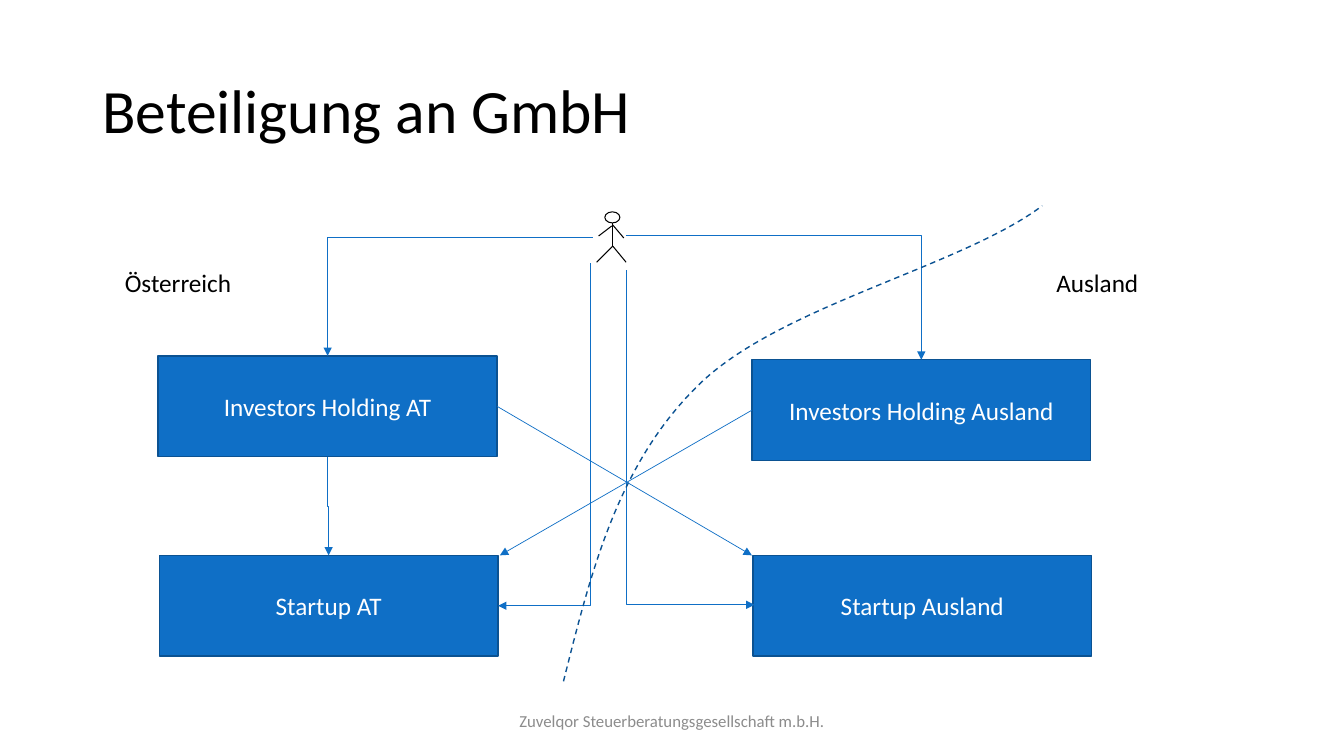
from lxml.etree import SubElement
from pptx import Presentation
from pptx.dml.color import RGBColor
from pptx.enum.dml import MSO_LINE_DASH_STYLE as Dash
from pptx.enum.shapes import MSO_CONNECTOR as Link, MSO_SHAPE as Shape
from pptx.enum.text import MSO_ANCHOR as Anchor, MSO_AUTO_SIZE as Fit, PP_ALIGN as Align
from pptx.oxml.ns import qn
from pptx.util import Pt

BLACK = RGBColor(0x00, 0x00, 0x00)
WHITE = RGBColor(0xFF, 0xFF, 0xFF)
GREY = RGBColor(0x8C, 0x8C, 0x8C)
BLUE = RGBColor(0x0F, 0x6F, 0xC6)
DARK_BLUE = RGBColor(0x0B, 0x52, 0x92)
BOX_WIDTH, BOX_HEIGHT = 242, 72


def write(frame, text, size, color, frame_format, para_format):
    """Put one formatted line of text into a text frame."""
    for name, value in frame_format.items():
        setattr(frame, name, value)
    para = frame.paragraphs[0]
    for name, value in para_format.items():
        setattr(para, name, value)
    span = para.add_run()
    span.text = text
    for name, value in {"name": "Calibri", "size": Pt(size)}.items():
        setattr(span.font, name, value)
    span.font.color.rgb = color


def add_text(page, box, text, size, color, frame_format, para_format):
    """Add a text box filling the given box."""
    area = page.shapes.add_textbox(*map(Pt, box))
    write(area.text_frame, text, size, color, frame_format, para_format)


def set_line(shape, color, width):
    """Give a shape or connector a plain outline."""
    shape.line.color.rgb = color
    shape.line.width = Pt(width)


def add_link(shapes, kind, start, end, color, width, arrow=True):
    """Add a connector without shadow, with an arrowhead if wanted."""
    link = shapes.add_connector(kind, *map(Pt, (*start, *end)))
    set_line(link, color, width)
    properties = link._element.spPr
    if arrow:
        SubElement(properties.find(qn("a:ln")), qn("a:tailEnd"), type="triangle")
    SubElement(properties, qn("a:effectLst"))
    return link


def add_elbow(page, start, end, preset, turn, flip):
    """Add a bent arrow whose frame is turned about its centre."""
    center = [(a + b) / 2 for a, b in zip(start, end)]
    size = [abs(a - b) for a, b in zip(start, end)]
    if turn in (90, 270):
        size.reverse()
    near = [c - s / 2 for c, s in zip(center, size)]
    far = [c + s / 2 for c, s in zip(center, size)]
    link = add_link(page.shapes, Link.ELBOW, near, far, BLUE, 0.5)
    properties = link._element.spPr
    properties.find(qn("a:prstGeom")).set("prst", preset)
    frame = properties.find(qn("a:xfrm"))
    frame.set("rot", str(turn * 60000))
    if flip:
        frame.set(flip, "1")


def add_entity(page, box, text):
    """Add a blue company box with a centred name."""
    entity = page.shapes.add_shape(Shape.RECTANGLE, *map(Pt, box))
    entity.shadow.inherit = False
    entity.fill.solid()
    entity.fill.fore_color.rgb = BLUE
    set_line(entity, DARK_BLUE, 1)
    write(entity.text_frame, text, 18, WHITE,
          {"word_wrap": True, "vertical_anchor": Anchor.MIDDLE}, {"alignment": Align.CENTER})
    return entity


def add_investor(page, box):
    """Draw the investor as a grouped stick figure."""
    left, top, width, height = box
    middle, hip = 11.5, 24.5
    limbs = [
        ((middle, 7.9), (middle, 25.2)),
        ((middle, 9.4), (19.4, 18.7)),
        ((middle, hip), (width, height)),
        ((10.8, 10.1), (1.4, 17.3)),
        ((middle, hip), (0, height)),
    ]
    shapes = page.shapes.add_group_shape().shapes
    for limb in limbs:
        start, end = [(left + x, top + y) for x, y in limb]
        add_link(shapes, Link.STRAIGHT, start, end, BLACK, 0.75, arrow=False)
    head = shapes.add_shape(Shape.OVAL, Pt(left + 5.8), Pt(top), Pt(10.8), Pt(7.9))
    head.shadow.inherit = False
    head.fill.solid()
    head.fill.fore_color.rgb = WHITE
    set_line(head, BLACK, 0.75)


def add_border(page, box):
    """Draw the dashed curved border between the two countries."""
    left, top = box[:2]
    knots = [(289.5, 339.7), (308.9, 262.7), (327.6, 185.6), (385.2, 128.8),
             (442.1, 71.9), (573.2, 43.8), (631.5, 0)]
    points = [(Pt(left + x), Pt(top + y)) for x, y in knots]
    builder = page.shapes.build_freeform(*points[0])
    builder.add_line_segments(points[1:], close=False)
    border = builder.convert_to_shape()
    border.shadow.inherit = False
    border.fill.background()
    set_line(border, DARK_BLUE, 1)
    border.line.dash_style = Dash.DASH
    segments = border._element.xpath(".//a:lnTo")
    outline = segments[0].getparent()
    for first in range(0, len(segments), 3):
        curve = SubElement(outline, qn("a:cubicBezTo"))
        for segment in segments[first:first + 3]:
            curve.append(segment[0])
            outline.remove(segment)


def add_diagram(page, box):
    """Draw the holdings, startups, investor and ownership arrows."""
    left, top = box[:2]

    def spot(x, y):
        """Shift a point into the diagram box."""
        return left + x, top + y

    entities = {
        name: add_entity(page, (*spot(x, y), BOX_WIDTH, BOX_HEIGHT), name)
        for name, x, y in [
            ("Startup AT", 0.8, 249.7),
            ("Startup Ausland", 424.8, 249.7),
            ("Investors Holding AT", 0, 107.2),
            ("Investors Holding Ausland", 424.1, 110),
        ]
    }
    add_investor(page, (*spot(313.2, 4.3), 21, 36))
    elbows = [
        ((121, 179.2), (121.8, 249.7), "bentConnector3", 270, "flipH"),
        ((310.5, 22.9), (121, 107.2), "bentConnector2", 180, "flipV"),
        ((308.9, 40.9), (242.8, 285.7), "bentConnector2", 90, None),
        ((334.1, 46), (426, 285), "bentConnector2", 270, "flipH"),
        ((334.1, 21.5), (545.1, 110), "bentConnector2", 0, None),
    ]
    for start, end, preset, turn, flip in elbows:
        add_elbow(page, spot(*start), spot(*end), preset, turn, flip)
    add_border(page, box)
    crossings = [
        ("Investors Holding AT", 3, (242, 143.2), (424.1, 249.7)),
        ("Investors Holding Ausland", 1, (424.1, 146), (244.1, 249.7)),
    ]
    for name, side, start, end in crossings:
        link = add_link(page.shapes, Link.STRAIGHT, spot(*start), spot(*end), BLUE, 0.5)
        link.begin_connect(entities[name], side)


def add_captions(page, box):
    """Add the title, the footer and the two country labels."""
    left, top, width, height = box
    middle = {"word_wrap": True, "vertical_anchor": Anchor.MIDDLE}
    add_text(page, (left + 66, top + 28.75, 828, 104.4), "Beteiligung an GmbH", 44, BLACK,
             middle, {"line_spacing": 0.9})
    add_text(page, (left + (width - 324) / 2, top + height - 39.5, 324, 28.75),
             "Zuvelqor Steuerberatungsgesellschaft m.b.H.", 12, GREY,
             middle, {"alignment": Align.CENTER})
    for text, x, label_width in [("Ausland", 747.4, 73.4), ("Österreich", 82.1, 91.4)]:
        add_text(page, (left + x, top + 187.5, label_width, 29), text, 18, BLACK,
                 {"word_wrap": False, "auto_size": Fit.SHAPE_TO_FIT_TEXT}, {})


def main():
    """Build and save the slide."""
    deck = Presentation()
    deck.slide_width, deck.slide_height = Pt(960), Pt(540)
    page = deck.slides.add_slide(deck.slide_layouts[6])
    add_captions(page, (0, 0, 960, 540))
    add_diagram(page, (113, 147, 667, 340))
    deck.save("out.pptx")


if __name__ == "__main__":
    main()
